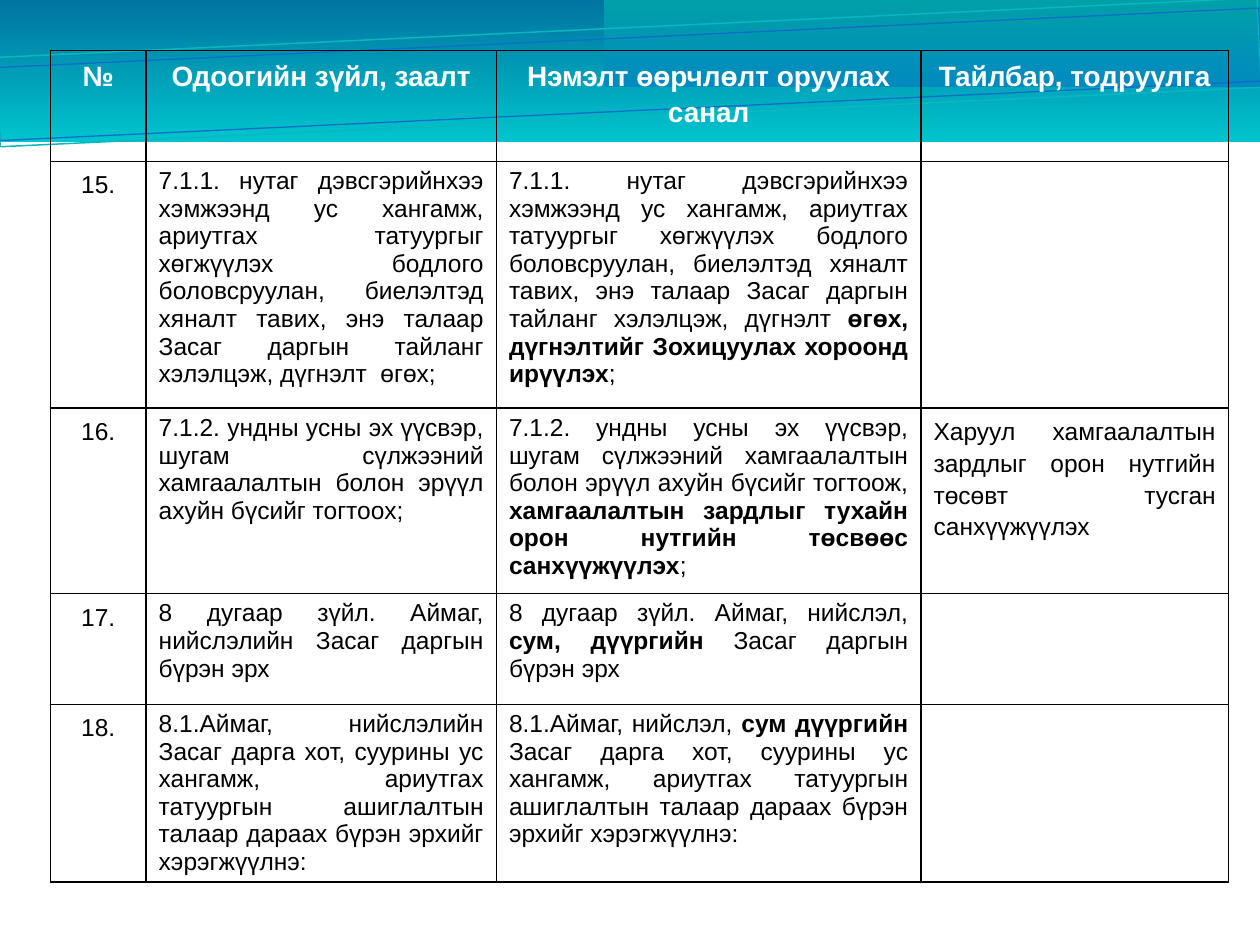
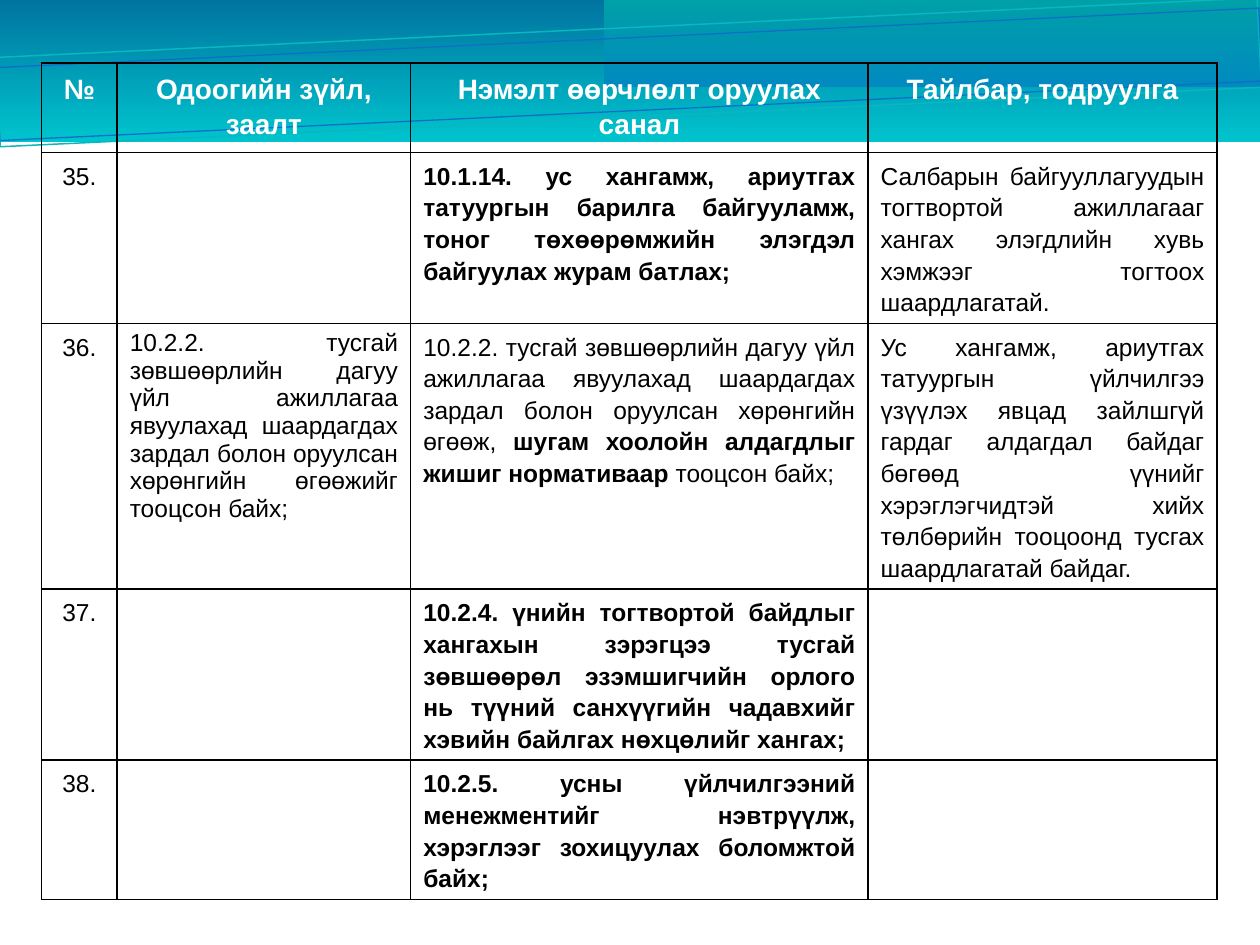
from dataclasses import dataclass
from typing import NamedTuple

from lxml import etree
from pptx import Presentation
from pptx.dml.color import RGBColor
from pptx.enum.shapes import MSO_SHAPE
from pptx.enum.text import PP_ALIGN
from pptx.oxml.ns import qn
from pptx.util import Inches, Pt

RECT = MSO_SHAPE.RECTANGLE
CENTER, JUSTIFY = PP_ALIGN.CENTER, PP_ALIGN.JUSTIFY

FONT = "Arial"
HEAD_SIZE, BODY_SIZE = 16, 14
LOOSE, SINGLE = 1.15, 1.0
BORDER_SIDES = ("a:lnL", "a:lnR", "a:lnT", "a:lnB")
COLORS = {
    "text": "000000",
    "header": "FFFFFF",
    "border": "000000",
    "band_top": "0074A0",
    "band_bottom": "00C4CD",
    "panel_top": "00A0A8",
    "panel_bottom": "008ABF",
    "wave_teal": "09B7BF",
    "wave_blue": "0F6FC6",
}


class Box(NamedTuple):
    left: float
    top: float
    width: float
    height: float


class Band(NamedTuple):
    box: Box
    start: str
    end: str
    angle: int  # counter-clockwise


class Wave(NamedTuple):
    box: Box
    color: str
    weight: float


class Run(NamedTuple):
    text: str
    bold: bool = False


Cell = tuple[Run, ...]


@dataclass(frozen=True)
class Amendment:
    number: str
    current: Cell = ()
    proposed: Cell = ()
    remark: Cell = ()

    def cells(self) -> tuple[Cell, ...]:
        return (Run(self.number),), self.current, self.proposed, self.remark


@dataclass(frozen=True)
class AmendmentTable:
    left: float
    top: float
    cols: tuple[float, ...]
    rows: tuple[float, ...]
    spacing: tuple[float, ...]  # line spacing of each body column
    amendments: tuple[Amendment, ...]


BANDS = (
    Band(Box(-0.01, -0.01, 10.02, 1.14), "band_top", "band_bottom", 270),
    Band(Box(4.79, -0.01, 5.21, 0.7), "panel_bottom", "panel_top", 90),
)
WAVES = (
    Wave(Box(-0.02, 0.22, 10.02, 0.71), "wave_teal", 0.85),
    Wave(Box(-0.02, 0.3, 10.03, 0.58), "wave_blue", 0.75),
)
WAVE_TILT = -2.7

HEADERS = ("№", "Одоогийн зүйл, заалт", "Нэмэлт өөрчлөлт оруулах санал",
           "Тайлбар, тодруулга")

TABLES = (
    AmendmentTable(
        0.4, 0.4, (0.76, 2.78, 3.37, 2.44), (0.88, 1.96, 1.47, 0.88, 1.41),
        (LOOSE, SINGLE, SINGLE, LOOSE),
        (
            Amendment(
                "15.",
                (Run("7.1.1. нутаг дэвсгэрийнхээ хэмжээнд ус хангамж, ариутгах "
                     "татуургыг хөгжүүлэх бодлого боловсруулан, биелэлтэд хяналт "
                     "тавих, энэ талаар Засаг даргын тайланг хэлэлцэж, "
                     "дүгнэлт  өгөх;"),),
                (Run("7.1.1. нутаг дэвсгэрийнхээ хэмжээнд ус хангамж, ариутгах "
                     "татуургыг хөгжүүлэх бодлого боловсруулан, биелэлтэд хяналт "
                     "тавих, энэ талаар Засаг даргын тайланг хэлэлцэж, дүгнэлт "),
                 Run("өгөх, дүгнэлтийг Зохицуулах хороонд ирүүлэх", True),
                 Run(";")),
            ),
            Amendment(
                "16.",
                (Run("7.1.2. ундны усны эх үүсвэр, шугам сүлжээний хамгаалалтын "
                     "болон эрүүл ахуйн бүсийг тогтоох;"),),
                (Run("7.1.2. ундны усны эх үүсвэр, шугам сүлжээний хамгаалалтын "
                     "болон эрүүл ахуйн бүсийг тогтоож, "),
                 Run("хамгаалалтын зардлыг тухайн орон нутгийн төсвөөс "
                     "санхүүжүүлэх", True),
                 Run(";")),
                (Run("Харуул хамгаалалтын зардлыг орон нутгийн төсөвт тусган "
                     "санхүүжүүлэх"),),
            ),
            Amendment(
                "17.",
                (Run("8 дугаар зүйл. Аймаг, нийслэлийн Засаг даргын бүрэн эрх"),),
                (Run("8 дугаар зүйл. Аймаг, нийслэл, "),
                 Run("сум, дүүргийн", True),
                 Run(" Засаг даргын бүрэн эрх")),
            ),
            Amendment(
                "18.",
                (Run("8.1.Аймаг, нийслэлийн Засаг дарга хот, суурины ус хангамж, "
                     "ариутгах татуургын ашиглалтын талаар дараах бүрэн эрхийг "
                     "хэрэгжүүлнэ:"),),
                (Run("8.1.Аймаг, нийслэл, "),
                 Run("сум дүүргийн", True),
                 Run(" Засаг дарга хот, суурины ус хангамж, ариутгах татуургын "
                     "ашиглалтын талаар дараах бүрэн эрхийг хэрэгжүүлнэ:")),
            ),
        ),
    ),
    AmendmentTable(
        0.33, 0.5, (0.6, 2.33, 3.63, 2.77), (0.71, 1.33, 1.87, 1.33, 1.06),
        (LOOSE, SINGLE, LOOSE, LOOSE),
        (
            Amendment(
                "35.",
                proposed=(Run("10.1.14. ус хангамж, ариутгах татуургын барилга "
                              "байгууламж, тоног төхөөрөмжийн элэгдэл байгуулах "
                              "журам батлах;", True),),
                remark=(Run("Салбарын байгууллагуудын тогтвортой ажиллагааг хангах "
                            "элэгдлийн хувь хэмжээг тогтоох шаардлагатай."),),
            ),
            Amendment(
                "36.",
                (Run("10.2.2. тусгай зөвшөөрлийн дагуу үйл ажиллагаа явуулахад "
                     "шаардагдах зардал болон оруулсан хөрөнгийн өгөөжийг тооцсон "
                     "байх;"),),
                (Run("10.2.2. тусгай зөвшөөрлийн дагуу үйл ажиллагаа явуулахад "
                     "шаардагдах зардал болон оруулсан хөрөнгийн өгөөж, "),
                 Run("шугам хоолойн алдагдлыг жишиг нормативаар ", True),
                 Run("тооцсон байх;")),
                (Run("Ус хангамж, ариутгах татуургын үйлчилгээ үзүүлэх явцад "
                     "зайлшгүй гардаг алдагдал байдаг бөгөөд үүнийг "
                     "хэрэглэгчидтэй хийх төлбөрийн тооцоонд тусгах шаардлагатай "
                     "байдаг."),),
            ),
            Amendment(
                "37.",
                proposed=(Run("10.2.4. үнийн тогтвортой байдлыг хангахын зэрэгцээ "
                              "тусгай зөвшөөрөл эзэмшигчийн орлого нь түүний "
                              "санхүүгийн чадавхийг хэвийн байлгах нөхцөлийг "
                              "хангах;", True),),
            ),
            Amendment(
                "38.",
                proposed=(Run("10.2.5. усны үйлчилгээний менежментийг нэвтрүүлж, "
                              "хэрэглээг зохицуулах боломжтой байх;", True),),
            ),
        ),
    ),
)


def rgb(name: str) -> RGBColor:
    return RGBColor.from_string(COLORS[name])


def add_rect(slide, box: Box):
    sp = slide.shapes.add_shape(RECT, *(Inches(v) for v in box))
    sp.shadow.inherit = False
    return sp


def add_band(slide, band: Band):
    sp = add_rect(slide, band.box)
    sp.fill.gradient()
    sp.fill.gradient_angle = band.angle
    for stop, name in zip(sp.fill.gradient_stops, (band.start, band.end)):
        stop.color.rgb = rgb(name)
    sp.line.fill.background()
    return sp


def add_wave(slide, wave: Wave):
    sp = add_rect(slide, wave.box)
    sp.rotation = WAVE_TILT
    sp.fill.background()
    sp.line.color.rgb = rgb(wave.color)
    sp.line.width = Pt(wave.weight)
    return sp


def decorate_layout(layout, slide) -> None:
    """Draw the header artwork and move it to the shared layout."""
    for ph in list(layout.placeholders):
        layout.shapes.element.remove(ph.element)
    artwork = [add_band(slide, band) for band in BANDS]
    artwork += [add_wave(slide, wave) for wave in WAVES]
    for sp in artwork:
        layout.shapes.element.append(sp.element)


def style_cell(cell) -> None:
    """Black grid lines, then a clear fill."""
    tc_pr = cell._tc.get_or_add_tcPr()
    for side in BORDER_SIDES:
        ln = etree.SubElement(tc_pr, qn(side), w=str(Pt(1)))
        fill = etree.SubElement(ln, qn("a:solidFill"))
        etree.SubElement(fill, qn("a:srgbClr"), val=COLORS["border"])
    cell.fill.background()


def write_cell(cell, runs: Cell, align: PP_ALIGN, spacing: float,
               size: int = BODY_SIZE, color: str = "text") -> None:
    style_cell(cell)
    p = cell.text_frame.paragraphs[0]
    p.alignment = align
    p.line_spacing = spacing
    for run in runs:
        r = p.add_run()
        r.text = run.text
        r.font.name = FONT
        r.font.size = Pt(size)
        r.font.bold = run.bold
        r.font.color.rgb = rgb(color)


def add_amendments(slide, spec: AmendmentTable) -> None:
    frame = slide.shapes.add_table(
        len(spec.rows), len(spec.cols), Inches(spec.left), Inches(spec.top),
        Inches(sum(spec.cols)), Inches(sum(spec.rows)))
    table = frame.table
    table.first_row = table.horz_banding = False
    for col, width in zip(table.columns, spec.cols):
        col.width = Inches(width)
    for row, height in zip(table.rows, spec.rows):
        row.height = Inches(height)

    # Header row
    for c, label in enumerate(HEADERS):
        write_cell(table.cell(0, c), (Run(label, True),), CENTER, LOOSE,
                   HEAD_SIZE, "header")

    # Body rows: centred number, justified text
    for r, amendment in enumerate(spec.amendments, start=1):
        for c, runs in enumerate(amendment.cells()):
            write_cell(table.cell(r, c), runs, JUSTIFY if c else CENTER,
                       spec.spacing[c])


def main() -> None:
    prs = Presentation()
    prs.slide_width, prs.slide_height = Inches(10), Inches(7.5)
    layout = prs.slide_layouts[6]
    slides = [prs.slides.add_slide(layout) for _ in TABLES]
    decorate_layout(layout, slides[0])
    for slide, spec in zip(slides, TABLES):
        add_amendments(slide, spec)
    prs.save("out.pptx")


if __name__ == "__main__":
    main()
